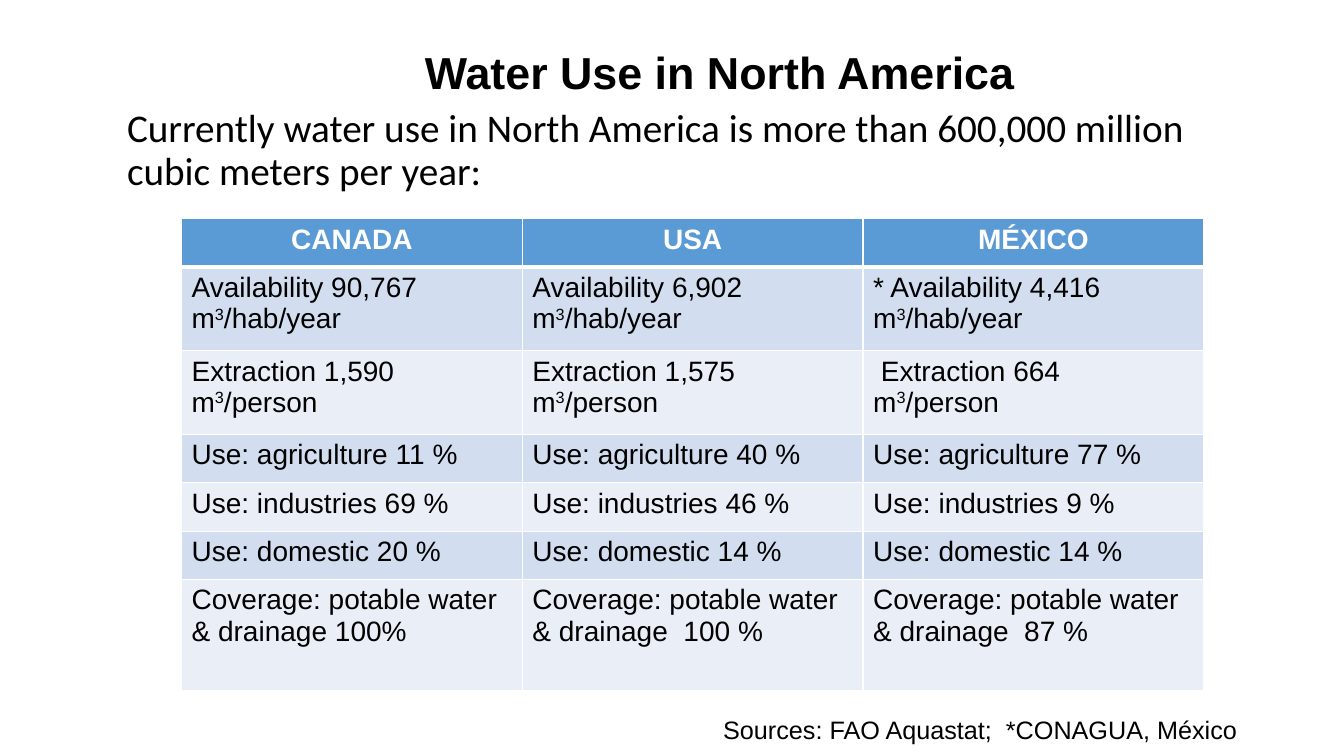
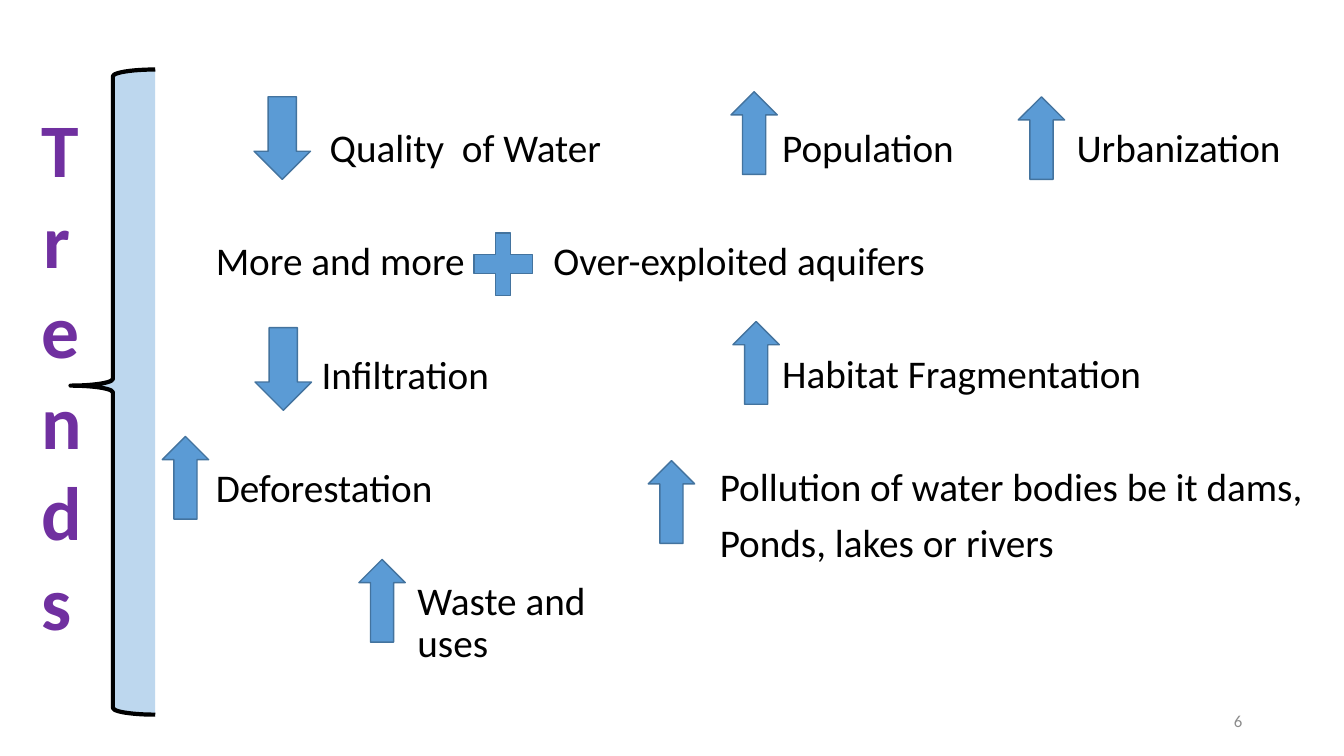
"""Build two slides on water use and water trends in North America."""
from lxml.etree import SubElement
from pptx import Presentation
from pptx.dml.color import RGBColor
from pptx.enum.shapes import MSO_SHAPE
from pptx.enum.text import MSO_ANCHOR, MSO_AUTO_SIZE, PP_ALIGN
from pptx.oxml.ns import qn
from pptx.util import Inches, Pt

HUES = {
    "black": "000000", "white": "FFFFFF", "gray": "8C8C8C",
    "blue": "5B9BD5", "edge": "43739E", "sky": "BDD7EE",
    "dark": "D2DEEF", "light": "EAEFF7", "purple": "7030A0",
}


def write(par, text, font="Arial", size=20, hue="black", bold=False,
          align=PP_ALIGN.LEFT, line=1.0, gap=0, left=0):
    """Fill a paragraph; text between carets is raised."""
    par.alignment, par.line_spacing, par.space_before = align, line, Pt(gap)
    props = par._p.get_or_add_pPr()
    props.set("marL", str(Inches(left)))
    props.set("indent", "0")
    SubElement(props, qn("a:buNone"))
    for i, part in enumerate(text.split("^")):
        run = par.add_run()
        run.text = part
        run.font.name, run.font.size, run.font.bold = font, Pt(size), bold
        run.font.color.rgb = RGBColor.from_string(HUES[hue])
        if i % 2:
            run._r.get_or_add_rPr().set("baseline", "30000")


def place(item, left, top, width, height, anchor=MSO_ANCHOR.TOP):
    """Move a text holder and return its frame, set to wrap."""
    item.left, item.top = Inches(left), Inches(top)
    item.width, item.height = Inches(width), Inches(height)
    frame = item.text_frame
    frame.word_wrap, frame.auto_size = True, MSO_AUTO_SIZE.NONE
    frame.vertical_anchor = anchor
    return frame


deck = Presentation()
deck.slide_width, deck.slide_height = Inches(13.33), Inches(7.5)
layout = deck.slide_layouts[1]
BODY = {"font": "Calibri", "size": 28, "line": 0.9}

use = deck.slides.add_slide(layout)
frame = place(use.shapes.title, 2.69, 0.39, 8.9, 0.64)
write(frame.paragraphs[0], "Water Use in North America", size=32, bold=True,
      align=PP_ALIGN.CENTER)
frame = place(use.placeholders[1], 1.16, 1.03, 11.59, 1.23)
write(frame.paragraphs[0], "Currently water use in North America is more than "
      "600,000 million cubic meters per year:", **BODY)

rows = [
    ("CANADA", "USA", "MÉXICO"),
    ("Availability 90,767 m^3^/hab/year", "Availability 6,902 m^3^/hab/year",
     "* Availability 4,416 m^3^/hab/year"),
    ("Extraction 1,590 m^3^/person", "Extraction 1,575 m^3^/person",
     " Extraction 664 m^3^/person"),
    ("Use: agriculture 11 %", "Use: agriculture 40 %", "Use: agriculture 77 %"),
    ("Use: industries 69 %", "Use: industries 46 %", "Use: industries 9 %"),
    ("Use: domestic 20 %", "Use: domestic 14 %", "Use: domestic 14 %"),
    ("Coverage: potable water & drainage 100%",
     "Coverage: potable water & drainage  100 %",
     "Coverage: potable water & drainage  87 %"),
]
highs = [0.48, 0.83, 0.83, 0.48, 0.48, 0.48, 1.1]
table = use.shapes.add_table(len(rows), 3, Inches(1.8), Inches(2.17),
                             Inches(10.14), Inches(sum(highs))).table
for col in table.columns:
    col.width = Inches(3.38)
for i, (row, high) in enumerate(zip(rows, highs)):
    table.rows[i].height = Inches(high)
    head = i == 0
    thick = {"lnT": 3 if i == 1 else 1, "lnB": 3 if head else 1}
    for j, text in enumerate(row):
        cell = table.cell(i, j)
        props = cell._tc.get_or_add_tcPr()
        for side in ("lnL", "lnR", "lnT", "lnB"):
            rule = SubElement(props, qn(f"a:{side}"),
                              w=str(Pt(thick.get(side, 1))))
            fill = SubElement(rule, qn("a:solidFill"))
            SubElement(fill, qn("a:srgbClr"), val=HUES["white"])
        cell.fill.solid()
        hue = "blue" if head else "dark" if i % 2 else "light"
        cell.fill.fore_color.rgb = RGBColor.from_string(HUES[hue])
        write(cell.text_frame.paragraphs[0], text, bold=head,
              hue="white" if head else "black",
              align=PP_ALIGN.CENTER if head else PP_ALIGN.LEFT)

note = use.shapes.add_textbox(0, 0, 0, 0)
write(place(note, 1.16, 7.04, 11.21, 0.4).paragraphs[0],
      "Sources: FAO Aquastat;  *CONAGUA, México", size=18,
      align=PP_ALIGN.RIGHT)

trend = deck.slides.add_slide(layout)
frame = place(trend.shapes.title, 0.31, 0.96, 0.51, 5.55)
write(frame.paragraphs[0], "Trends", font="Calibri", size=54, hue="purple",
      bold=True, align=PP_ALIGN.CENTER)

TOP, STEP = 1.23, 1.12
items = [("Quality  of Water", 1.13), ("More and more", 0),
         ("Infiltration", 1.05), ("Deforestation", 0), ("Waste and uses", 2)]
frame = place(trend.placeholders[1], 2.04, TOP, 4.6, 5.7)
for i, (text, left) in enumerate(items):
    par = frame.add_paragraph() if i else frame.paragraphs[0]
    write(par, text, gap=50.5 if i else 0, left=left, **BODY)

sides = [
    (0, 7.66, 2.3, ["Population"]), (0, 10.58, 2.5, ["Urbanization"]),
    (1, 5.39, 5, ["Over-exploited aquifers"]),
    (2, 7.66, 5, ["Habitat Fragmentation"]),
    (3, 7.04, 6.29, ["Pollution of water bodies be it dams,",
                     "Ponds, lakes or rivers"]),
]
for row, left, width, texts in sides:
    box = trend.shapes.add_textbox(0, 0, 0, 0)
    frame = place(box, left, TOP + row * STEP, width, 0.56 * len(texts))
    for i, text in enumerate(texts):
        par = frame.add_paragraph() if i else frame.paragraphs[0]
        write(par, text, gap=10 if i else 0, **BODY)

page = trend.shapes.add_textbox(0, 0, 0, 0)
write(place(page, 9.42, 6.95, 3, 0.4, MSO_ANCHOR.MIDDLE).paragraphs[0], "6",
      font="Calibri", size=12, hue="gray", align=PP_ALIGN.RIGHT)

down = (MSO_SHAPE.DOWN_ARROW, 0.56, 0.82, (), "blue", "edge", 1)
up = (MSO_SHAPE.UP_ARROW, 0.46, 0.82, (), "blue", "edge", 1)
plus = (MSO_SHAPE.CROSS, 0.58, 0.62, (0.37,), "blue", "edge", 1)
brace = (MSO_SHAPE.LEFT_BRACE, 0.84, 6.4, (0.08, 0.49), "sky", "black", 3)
marks = [
    (down, 2.52, 0.96), (plus, 4.7, 2.31), (up, 7.25, 0.91), (up, 10.1, 0.96),
    (down, 2.53, 3.25), (up, 7.27, 3.19), (up, 1.61, 4.33), (up, 6.43, 4.57),
    (brace, 0.7, 0.69), (up, 3.56, 5.55),
]
for (kind, width, height, bends, hue, edge, weight), left, top in marks:
    mark = trend.shapes.add_shape(kind, Inches(left), Inches(top),
                                  Inches(width), Inches(height))
    for i, bend in enumerate(bends):
        mark.adjustments[i] = bend
    mark.shadow.inherit = False
    mark.fill.solid()
    mark.fill.fore_color.rgb = RGBColor.from_string(HUES[hue])
    mark.line.color.rgb = RGBColor.from_string(HUES[edge])
    mark.line.width = Pt(weight)

deck.save("out.pptx")
